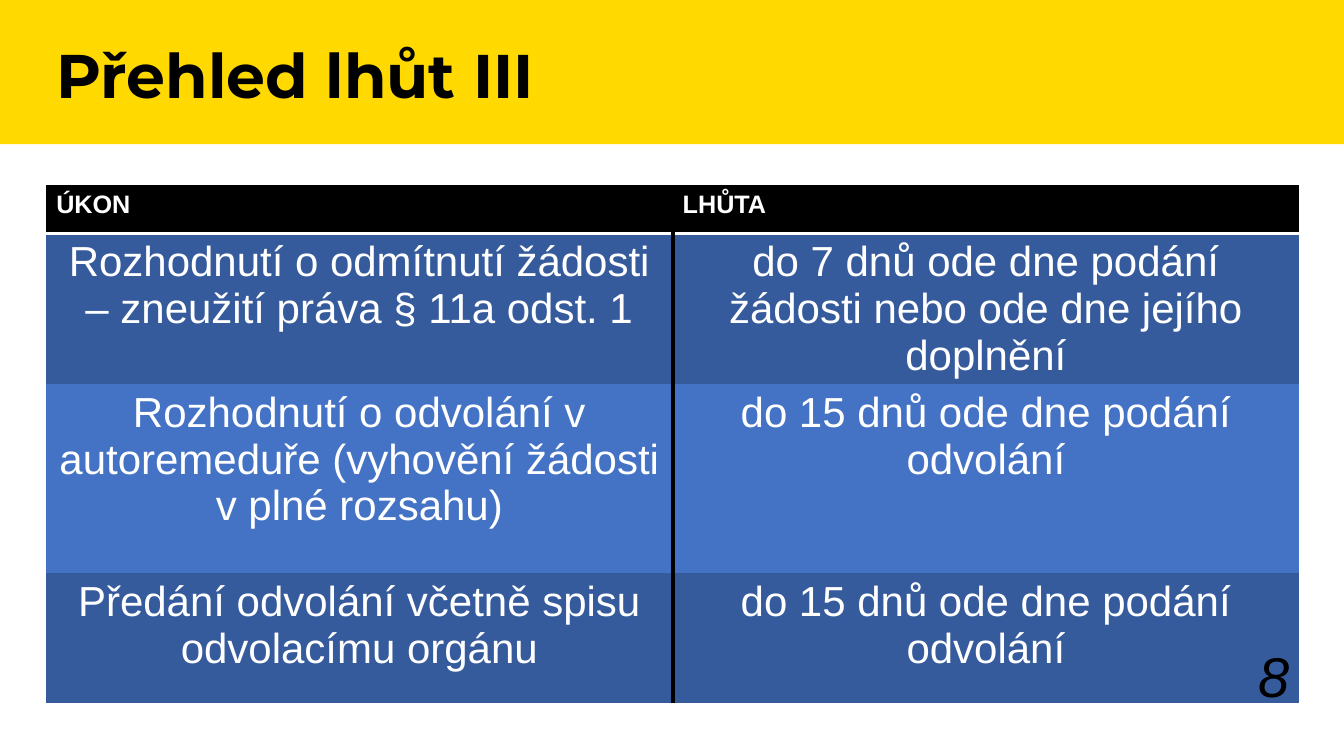
import pptx
import pptx.util
import pptx.dml.color
import pptx.enum.shapes
import pptx.enum.text
import pptx.oxml
import pptx.oxml.ns

Pt = pptx.util.Pt
Align = pptx.enum.text.PP_ALIGN
Anchor = pptx.enum.text.MSO_ANCHOR

TITLE = "Přehled lhůt III"
NUMBER = "8"
ROWS = [
    ("ÚKON", "LHŮTA"),
    ("Rozhodnutí o odmítnutí žádosti – zneužití práva § 11a odst. 1",
     "do 7 dnů ode dne podání žádosti nebo ode dne jejího doplnění"),
    ("Rozhodnutí o odvolání v autoremeduře (vyhovění žádosti v plné rozsahu)",
     "do 15 dnů ode dne podání odvolání"),
    ("Předání odvolání včetně spisu odvolacímu orgánu",
     "do 15 dnů ode dne podání odvolání"),
]

THEME = {
    "band": "FFD900", "dark": "000000", "light": "FFFFFF",
    "odd": "365B9D", "even": "4472C4",
    "head": "Montserrat", "body": "Arial",
    "title": 44, "label": 18, "cell": 30, "number": 40,
}

WIDE, HIGH = 960, 540
LEFT, TOP = 33, 132.25
COLUMN = 447.5
HEIGHTS = [34.5, 107.5, 135, 93]


def color(name):
    return pptx.dml.color.RGBColor.from_string(THEME[name])


def style(para, face, size, ink, align=Align.LEFT, bold=False, italic=False):
    para.alignment = align
    font = para.font
    font.name, font.size = THEME[face], Pt(THEME[size])
    font.color.rgb = color(ink)
    font.bold, font.italic = bold, italic


def write(slide, text, box, anchor):
    """Add a wrapped text box and return its paragraph."""
    frame = slide.shapes.add_textbox(*map(Pt, box)).text_frame
    frame.word_wrap = True
    frame.vertical_anchor = anchor
    frame.text = text
    return frame.paragraphs[0]


def border(cell, side, ink, width):
    line = pptx.oxml.parse_xml(
        f'<a:ln{side} {pptx.oxml.ns.nsdecls("a")} w="{Pt(width)}">'
        f'<a:solidFill><a:srgbClr val="{THEME[ink]}"/></a:solidFill>'
        f'</a:ln{side}>')
    cell._tc.get_or_add_tcPr().insert(0, line)


def fill_table(slide):
    shape = slide.shapes.add_table(
        len(ROWS), 2, Pt(LEFT), Pt(TOP), Pt(2 * COLUMN), Pt(sum(HEIGHTS)))
    table = shape.table
    # The plain style has no grid of its own.
    table._tbl.tblPr.find(pptx.oxml.ns.qn("a:tableStyleId")).text = (
        "{2D5ABB26-0587-4C30-8999-92F81FD0307C}")
    for column in table.columns:
        column.width = Pt(COLUMN)
    for r, texts in enumerate(ROWS):
        table.rows[r].height = Pt(HEIGHTS[r])
        for c, text in enumerate(texts):
            cell = table.cell(r, c)
            cell.text = text
            para = cell.text_frame.paragraphs[0]
            cell.fill.solid()
            if r == 0:
                cell.fill.fore_color.rgb = color("dark")
                style(para, "body", "label", "light", bold=True)
                border(cell, "B", "light", 2)
            else:
                cell.fill.fore_color.rgb = color("odd" if r % 2 else "even")
                style(para, "body", "cell", "light", Align.CENTER)
                border(cell, "RL"[c], "dark", 3)


def main():
    deck = pptx.Presentation()
    deck.slide_width, deck.slide_height = Pt(WIDE), Pt(HIGH)
    slide = deck.slides.add_slide(deck.slide_layouts[6])

    band = slide.shapes.add_shape(
        pptx.enum.shapes.MSO_SHAPE.RECTANGLE, 0, 0, Pt(WIDE), Pt(103))
    band.shadow.inherit = False
    band.fill.solid()
    band.fill.fore_color.rgb = color("band")
    band.line.fill.background()

    fill_table(slide)

    para = write(slide, NUMBER, (712, 469, 216, 41), Anchor.BOTTOM)
    style(para, "body", "number", "dark", Align.RIGHT, italic=True)

    para = write(slide, TITLE, (LEFT, 29, 887, 73), Anchor.TOP)
    style(para, "head", "title", "dark", bold=True)
    para.line_spacing = 0.9

    deck.save("out.pptx")


if __name__ == "__main__":
    main()
